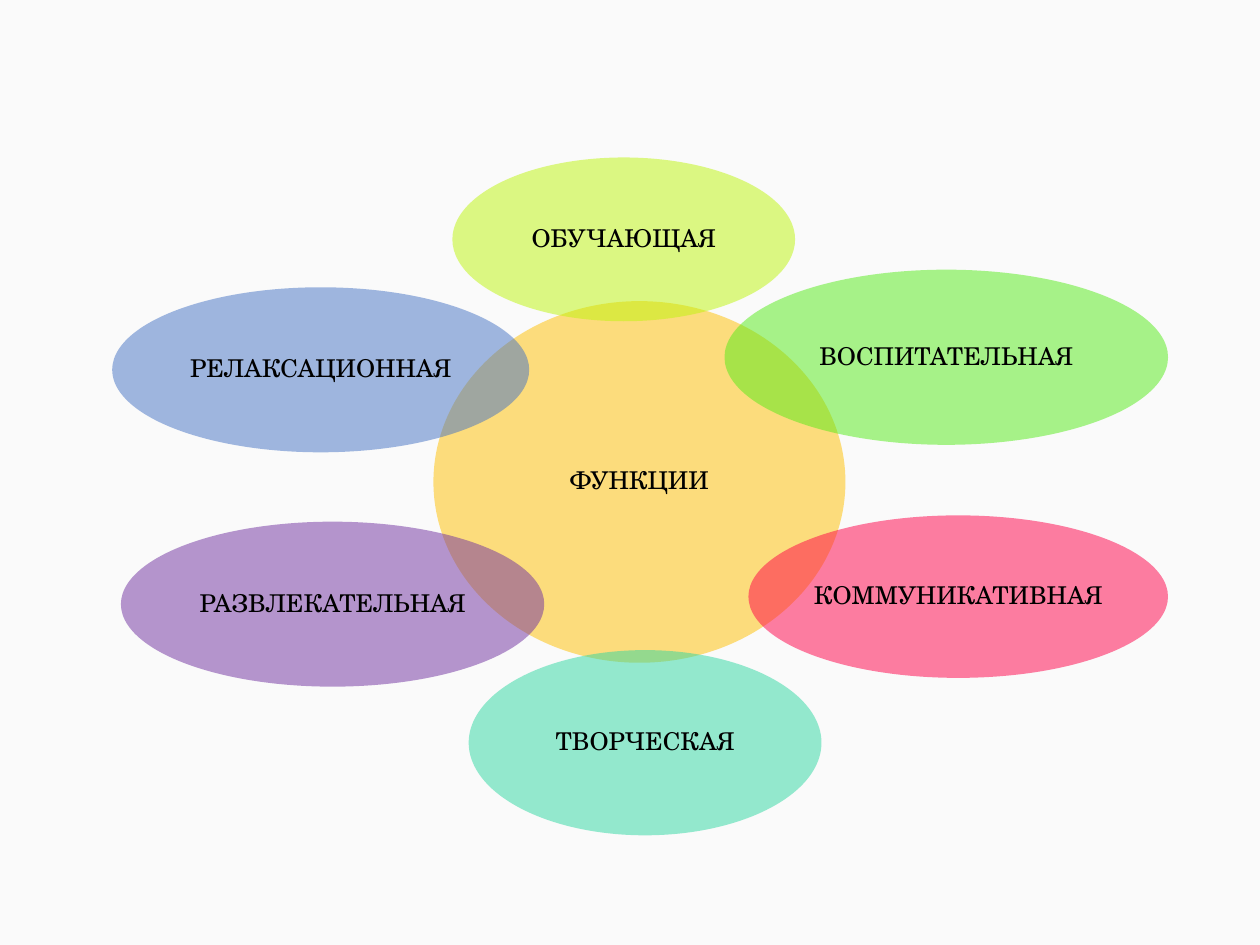
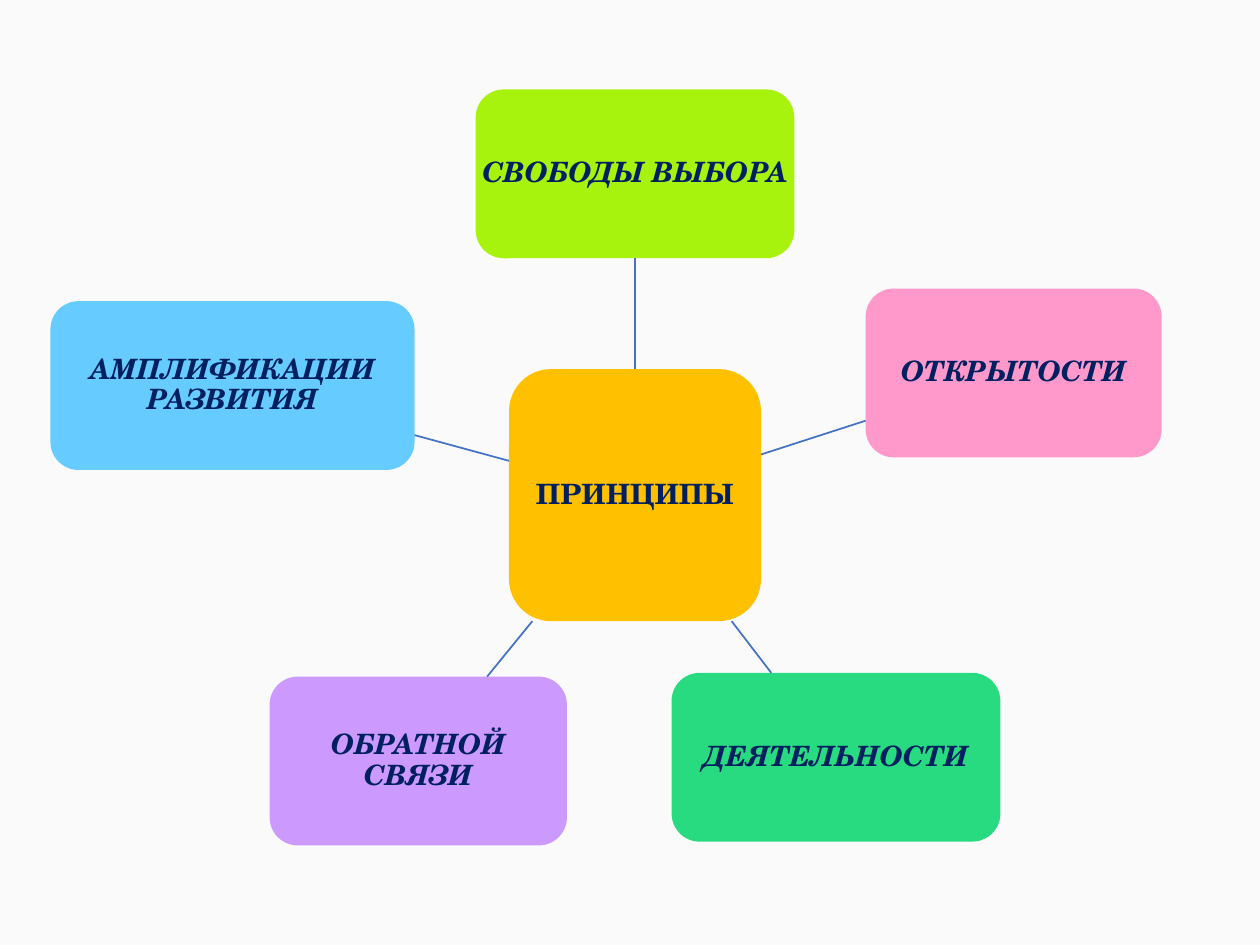
import lxml.etree
import pptx
import pptx.dml.color
import pptx.enum.shapes
import pptx.enum.text
import pptx.oxml.ns
import pptx.util

COLUMNS, ROWS = 100, 75
CELL = pptx.util.Inches(0.1)
FONT = "TeX Gyre Schola"
BACKGROUND = "FAFAFA"
LINE_COLOR = "4472C4"
TOP, BOTTOM = 0, 2

FUNCTION_STYLE = {"shape": pptx.enum.shapes.MSO_SHAPE.OVAL, "size": 14,
                  "color": "000000", "bold": False, "inset": 0.2, "opacity": 50}
PRINCIPLE_STYLE = {"shape": pptx.enum.shapes.MSO_SHAPE.ROUNDED_RECTANGLE, "size": 16,
                   "color": "002060", "bold": True, "inset": 0.4, "opacity": 100}

FUNCTIONS = [
    ("ФУНКЦИИ", "FFC000", (34.4, 23.9, 32.7, 28.7)),
    ("ОБУЧАЮЩАЯ", "BEF50C", (35.9, 12.5, 27.2, 13)),
    ("ВОСПИТАТЕЛЬНАЯ", "53EB17", (57.5, 21.4, 35.2, 13.9)),
    ("КОММУНИКАТИВНАЯ", "FF0048", (59.4, 40.9, 33.3, 12.9)),
    ("ТВОРЧЕСКАЯ", "2ED7A1", (37.2, 51.6, 28, 14.7)),
    ("РАЗВЛЕКАТЕЛЬНАЯ", "7030A0", (9.6, 41.4, 33.6, 13.1)),
    ("РЕЛАКСАЦИОННАЯ", "4472C4", (8.9, 22.8, 33.1, 13.1)),
]

HUB = ("ПРИНЦИПЫ", "FFC000", (40.4, 29.3, 20, 20))
PRINCIPLE_HEIGHT = 13.4
PRINCIPLES = [
    ("СВОБОДЫ ВЫБОРА", "A7F30E", (37.75, 7.1, 25.3), False),
    ("ОТКРЫТОСТИ", "FF99CC", (68.7, 22.9, 23.5), False),
    ("ДЕЯТЕЛЬНОСТИ", "29DB80", (53.3, 53.4, 26.1), False),
    ("ОБРАТНОЙ СВЯЗИ", "CC99FF", (21.4, 53.7, 23.6), True),
    ("АМПЛИФИКАЦИИ РАЗВИТИЯ", "66CCFF", (4, 23.9, 28.9), True),
]


def rgb(value):
    return pptx.dml.color.RGBColor.from_string(value)


def cells(value):
    return pptx.util.Emu(round(value * CELL))


def set_opacity(shape, percent):
    color = shape._element.spPr.find(
        pptx.oxml.ns.qn("a:solidFill") + "/" + pptx.oxml.ns.qn("a:srgbClr"))
    lxml.etree.SubElement(color, pptx.oxml.ns.qn("a:alpha"), val=str(percent * 1000))


def add_label_shape(slide, label, fill, box, style, italic=False, wrap=False):
    shape = slide.shapes.add_shape(style["shape"], *map(cells, box))
    shape.shadow.inherit = False
    shape.fill.solid()
    shape.fill.fore_color.rgb = rgb(fill)
    shape.line.fill.background()
    if style["opacity"] < 100:
        set_opacity(shape, style["opacity"])
    frame = shape.text_frame
    frame.word_wrap = wrap
    frame.vertical_anchor = pptx.enum.text.MSO_ANCHOR.MIDDLE
    inset = cells(style["inset"])
    frame.margin_left = frame.margin_right = inset
    frame.margin_top = frame.margin_bottom = inset
    paragraph = frame.paragraphs[0]
    paragraph.alignment = pptx.enum.text.PP_ALIGN.CENTER
    paragraph.line_spacing = 0.9
    run = paragraph.add_run()
    run.text = label
    run.font.name = FONT
    run.font.size = pptx.util.Pt(style["size"])
    run.font.color.rgb = rgb(style["color"])
    run.font.bold = style["bold"]
    run.font.italic = italic
    return shape


def center(shape):
    return shape.left + shape.width / 2, shape.top + shape.height / 2


def edge_toward(shape, target):
    x, y = center(shape)
    dx, dy = target[0] - x, target[1] - y
    share = 1 / max(abs(dx) * 2 / shape.width, abs(dy) * 2 / shape.height)
    return round(x + dx * share), round(y + dy * share)


def join(slide, hub, outer):
    start = edge_toward(hub, center(outer))
    end = edge_toward(outer, center(hub))
    connector = slide.shapes.add_connector(
        pptx.enum.shapes.MSO_CONNECTOR.STRAIGHT, *start, *end)
    connector.line.color.rgb = rgb(LINE_COLOR)
    connector.line.width = pptx.util.Pt(1)
    lxml.etree.SubElement(connector._element.spPr, pptx.oxml.ns.qn("a:effectLst"))
    if abs(center(hub)[0] - center(outer)[0]) < CELL:
        connector.begin_connect(hub, TOP)
        connector.end_connect(outer, BOTTOM)


def build_functions(slide):
    for label, fill, box in FUNCTIONS:
        add_label_shape(slide, label, fill, box, FUNCTION_STYLE)


def build_principles(slide):
    hub = add_label_shape(slide, *HUB, PRINCIPLE_STYLE)
    for label, fill, place, wrap in PRINCIPLES:
        box = (*place, PRINCIPLE_HEIGHT)
        outer = add_label_shape(slide, label, fill, box, PRINCIPLE_STYLE, True, wrap)
        join(slide, hub, outer)


def main():
    presentation = pptx.Presentation()
    presentation.slide_width = cells(COLUMNS)
    presentation.slide_height = cells(ROWS)
    background = presentation.slide_master.background.fill
    background.solid()
    background.fore_color.rgb = rgb(BACKGROUND)
    for build in (build_functions, build_principles):
        build(presentation.slides.add_slide(presentation.slide_layouts[6]))
    presentation.save("out.pptx")


if __name__ == "__main__":
    main()
